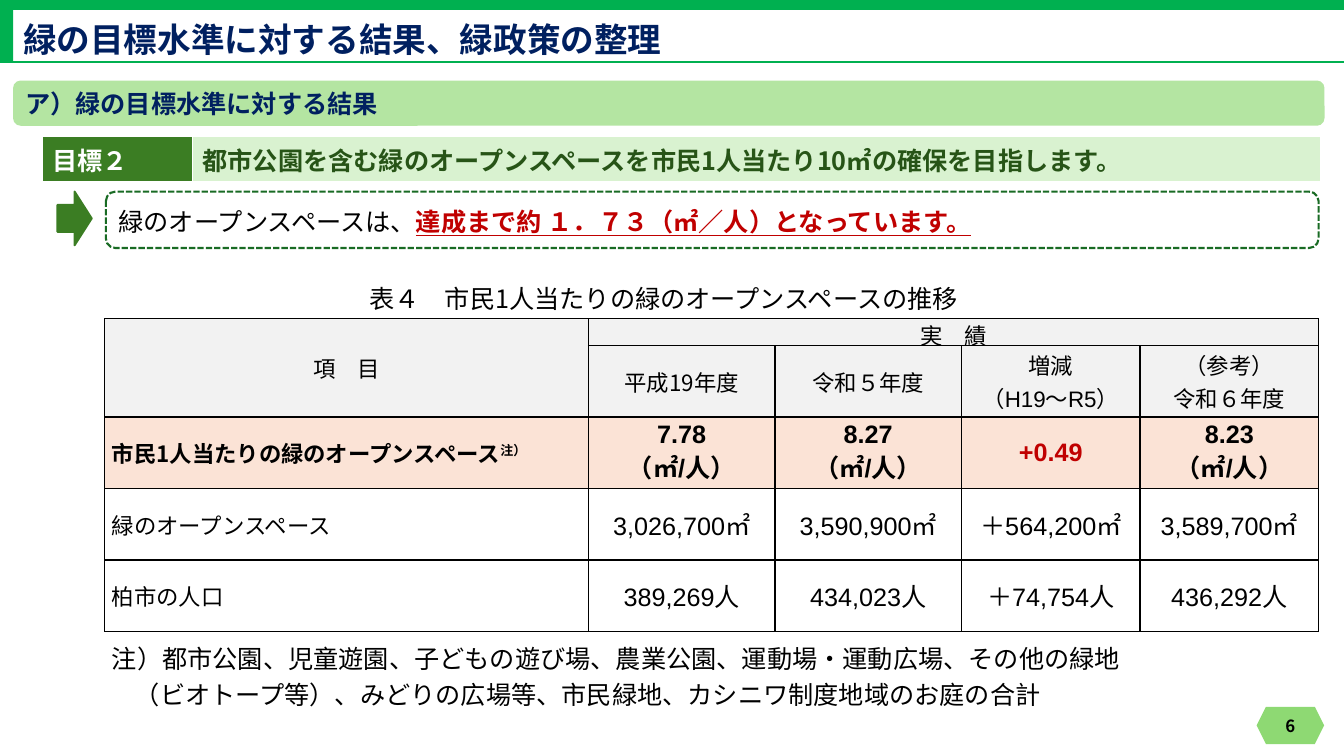
"""Build the slide on green open space per citizen."""
from dataclasses import dataclass
from typing import Optional

from lxml.etree import SubElement
from pptx import Presentation
from pptx.dml.color import RGBColor
from pptx.enum.dml import MSO_LINE
from pptx.enum.shapes import MSO_CONNECTOR, MSO_SHAPE
from pptx.enum.text import MSO_ANCHOR, PP_ALIGN
from pptx.oxml.ns import qn
from pptx.util import Cm, Pt

GOTHIC = "Noto Sans CJK JP"
SANS = "Arial"
WHITE = RGBColor(0xFF, 0xFF, 0xFF)
BLACK = RGBColor(0x00, 0x00, 0x00)
GREEN = RGBColor(0x00, 0xB0, 0x50)
NAVY = RGBColor(0x00, 0x20, 0x60)
RED = RGBColor(0xC0, 0x00, 0x00)
LEAF = RGBColor(0x8E, 0xD9, 0x73)
SECTION_GREEN = RGBColor(0xB4, 0xE5, 0xA2)
DARK_GREEN = RGBColor(0x3B, 0x7D, 0x23)
PALE_GREEN = RGBColor(0xD9, 0xF2, 0xD0)
GOAL_GREEN = RGBColor(0x27, 0x54, 0x17)
FRAME_GREEN = RGBColor(0x19, 0x6B, 0x24)
HEADER_GREY = RGBColor(0xF2, 0xF2, 0xF2)
PEACH = RGBColor(0xFB, 0xE3, 0xD6)


@dataclass(frozen=True)
class Block:
    kind: MSO_SHAPE
    left: float
    top: float
    width: float
    height: float
    fill: Optional[RGBColor] = None
    outline: Optional[RGBColor] = None
    dash: Optional[MSO_LINE] = None


@dataclass(frozen=True)
class RowStyle:
    height: float
    fill: Optional[RGBColor]
    size: float
    font: str
    bold: bool = False


def write(frame, text, *, size=18, font=GOTHIC, color=BLACK, bold=False,
          underline=False, baseline=0, align=PP_ALIGN.LEFT):
    """Add text to the last paragraph, one further paragraph per line."""
    for index, line in enumerate(text.split("\n")):
        paragraph = frame.add_paragraph() if index else frame.paragraphs[-1]
        paragraph.alignment = align
        run = paragraph.add_run()
        run.text = line
        run.font.size = Pt(size)
        run.font.name = font
        run.font.bold = bold
        run.font.underline = underline
        run.font.color.rgb = color
        properties = run._r.get_or_add_rPr()
        SubElement(properties, qn("a:ea"), typeface=GOTHIC)
        if baseline:
            properties.set("baseline", str(baseline * 1000))


def draw_block(slide, block: Block):
    """Draw a flat preset shape and return its text frame."""
    shape = slide.shapes.add_shape(block.kind, Cm(block.left), Cm(block.top),
                                   Cm(block.width), Cm(block.height))
    shape.shadow.inherit = False
    if block.fill is None:
        shape.fill.background()
    else:
        shape.fill.solid()
        shape.fill.fore_color.rgb = block.fill
    if block.outline is None:
        shape.line.fill.background()
    else:
        shape.line.color.rgb = block.outline
        shape.line.width = Pt(1.5)
        if block.dash is not None:
            shape.line.dash_style = block.dash
    frame = shape.text_frame
    frame.word_wrap = True
    return frame


def draw_table(slide, left: float, top: float, widths: list, heights: list):
    """Add a table without banding, sized by its columns and rows."""
    table = slide.shapes.add_table(len(heights), len(widths), Cm(left), Cm(top),
                                   Cm(sum(widths)), Cm(sum(heights))).table
    table.first_row = False
    table.horz_banding = False
    for column, width in zip(table.columns, widths):
        column.width = Cm(width)
    for row, height in zip(table.rows, heights):
        row.height = Cm(height)
    return table


def format_cell(cell, fill: Optional[RGBColor], borders: dict):
    """Set the fill and the borders, given as side to colour and points."""
    properties = cell._tc.get_or_add_tcPr()
    for side in "LRTB":
        color, width = borders.get(side, (None, 1))
        edge = SubElement(properties, qn(f"a:ln{side}"), w=str(Pt(width)))
        if color is None:
            SubElement(edge, qn("a:noFill"))
        else:
            paint = SubElement(edge, qn("a:solidFill"))
            SubElement(paint, qn("a:srgbClr"), val=str(color))
    if fill is None:
        cell.fill.background()
    else:
        cell.fill.solid()
        cell.fill.fore_color.rgb = fill


def draw_header(slide):
    """Draw the title with its green bars and rule."""
    draw_block(slide, Block(MSO_SHAPE.RECTANGLE, 0, 0, 33.87, 0.25, GREEN))
    draw_block(slide, Block(MSO_SHAPE.RECTANGLE, 0, 0.2, 0.33, 1.37, GREEN))
    rule = slide.shapes.add_connector(MSO_CONNECTOR.STRAIGHT,
                                      Cm(0), Cm(1.57), Cm(33.87), Cm(1.57))
    rule.line.color.rgb = GREEN
    rule.line.width = Pt(1.5)
    SubElement(rule._element.spPr, qn("a:effectLst"))
    title = slide.shapes.title
    title.left, title.top, title.width, title.height = Cm(0.33), Cm(0.36), Cm(16.76), Cm(1.27)
    title.text_frame.word_wrap = False
    title.text_frame.vertical_anchor = MSO_ANCHOR.TOP
    write(title.text_frame, "緑の目標水準に対する結果、緑政策の整理", size=24, color=NAVY, bold=True)


def draw_goal(slide):
    """Draw the section band, the goal and its result."""
    section = draw_block(slide, Block(MSO_SHAPE.ROUNDED_RECTANGLE, 0.33, 2.03, 33.05, 1.14, SECTION_GREEN))
    write(section, "ア）緑の目標水準に対する結果", color=NAVY, bold=True)

    goal = draw_table(slide, 1.07, 3.43, [3.78, 28.42], [0.94])
    edges = {"L": (WHITE, 1), "T": (WHITE, 1), "R": (WHITE, 1), "B": (WHITE, 3)}
    entries = [("目標２", WHITE, DARK_GREEN),
               ("都市公園を含む緑のオープンスペースを市民1人当たり10㎡の確保を目指します。", GOAL_GREEN, PALE_GREEN)]
    for cell, (text, color, fill) in zip(goal.rows[0].cells, entries):
        format_cell(cell, fill, edges)
        write(cell.text_frame, text, color=color, bold=True)

    draw_block(slide, Block(MSO_SHAPE.RIGHT_ARROW, 1.45, 4.83, 0.86, 1.35, DARK_GREEN, DARK_GREEN))
    result = draw_block(slide, Block(MSO_SHAPE.ROUNDED_RECTANGLE, 2.67, 4.83, 30.56, 1.42,
                                     outline=FRAME_GREEN, dash=MSO_LINE.SQUARE_DOT))
    result.vertical_anchor = MSO_ANCHOR.TOP
    result.margin_top, result.margin_bottom = Cm(0.3), Cm(0.2)
    write(result, "緑のオープンスペースは、")
    write(result, "達成まで約 １．７３（㎡／人）となっています。", color=RED, bold=True, underline=True)


def draw_trend(slide):
    """Draw the captioned table of open space per citizen."""
    caption = slide.shapes.add_textbox(Cm(5.28), Cm(7.01), Cm(22.89), Cm(1.02)).text_frame
    caption.word_wrap = True
    write(caption, "表４　市民1人当たりの緑のオープンスペースの推移", align=PP_ALIGN.CENTER)

    styles = [RowStyle(0.68, HEADER_GREY, 16, GOTHIC),
              RowStyle(1.8, HEADER_GREY, 16, GOTHIC),
              RowStyle(1.8, PEACH, 18, SANS, True),
              RowStyle(1.8, None, 18, SANS),
              RowStyle(1.8, None, 18, SANS),
              RowStyle(2.21, None, 18, GOTHIC)]
    note = ("注）都市公園、児童遊園、子どもの遊び場、農業公園、運動場・運動広場、その他の緑地"
            "（ビオトープ等）、みどりの広場等、市民緑地、カシニワ制度地域のお庭の合計")
    contents = [
        ["項　目", "実　績", "", "", ""],
        ["", "平成19年度", "令和５年度", "増減\n（H19～R5）", "（参考）\n令和６年度"],
        ["市民1人当たりの緑のオープンスペース", "7.78\n（㎡/人）", "8.27\n（㎡/人）", "+0.49", "8.23\n（㎡/人）"],
        ["緑のオープンスペース", "3,026,700㎡", "3,590,900㎡", "＋564,200㎡", "3,589,700㎡"],
        ["柏市の人口", "389,269人", "434,023人", "＋74,754人", "436,292人"],
        [note, "", "", "", ""]]
    trend = draw_table(slide, 2.64, 8.03, [12.19, 4.7, 4.7, 4.5, 4.5], [style.height for style in styles])
    note_row = len(styles) - 1
    for r, (style, texts) in enumerate(zip(styles, contents)):
        sides = "T" if r == note_row else "LRTB"
        for c, text in enumerate(texts):
            cell = trend.cell(r, c)
            cell.margin_left = cell.margin_right = Cm(0.18)
            cell.margin_top = cell.margin_bottom = Cm(0)
            cell.vertical_anchor = MSO_ANCHOR.MIDDLE
            format_cell(cell, style.fill, {side: (BLACK, 1) for side in sides})
            if not text:
                continue
            is_label = c == 0 and 2 <= r < note_row
            align = PP_ALIGN.JUSTIFY if is_label else PP_ALIGN.LEFT if r == note_row else PP_ALIGN.CENTER
            write(cell.text_frame, text, size=16 if is_label else style.size,
                  font=GOTHIC if is_label else SANS if "増減" in text else style.font,
                  bold=style.bold, color=RED if text == "+0.49" else BLACK, align=align)
    write(trend.cell(2, 0).text_frame, "注）", size=16, bold=True, baseline=30, align=PP_ALIGN.JUSTIFY)
    indent = trend.cell(note_row, 0).text_frame.paragraphs[0]._p.get_or_add_pPr()
    indent.set("marL", str(Cm(0.58)))
    indent.set("indent", str(Cm(-0.58)))
    trend.cell(0, 0).merge(trend.cell(1, 0))
    trend.cell(0, 1).merge(trend.cell(0, 4))
    trend.cell(note_row, 0).merge(trend.cell(note_row, 3))


def main():
    """Build and save the slide."""
    deck = Presentation()
    deck.slide_width, deck.slide_height = Cm(33.87), Cm(19.05)
    slide = deck.slides.add_slide(deck.slide_layouts[5])
    draw_header(slide)
    draw_goal(slide)
    draw_trend(slide)
    page = draw_block(slide, Block(MSO_SHAPE.HEXAGON, 31.67, 17.81, 1.7, 0.94, LEAF))
    page.margin_left = page.margin_right = page.margin_top = page.margin_bottom = Cm(0)
    write(page, "6", size=12, bold=True, align=PP_ALIGN.CENTER)
    deck.save("out.pptx")


if __name__ == "__main__":
    main()
